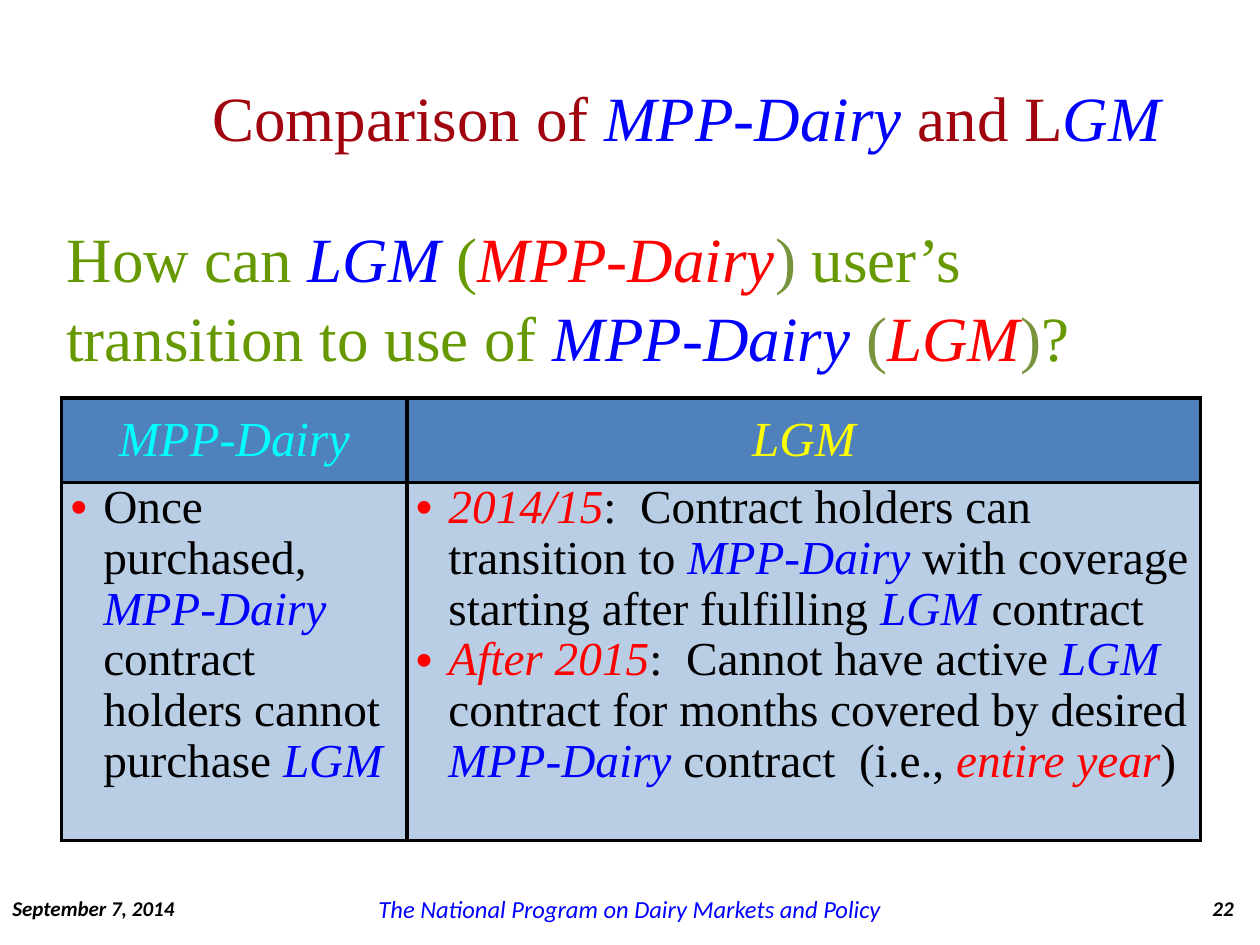
"""Build the slide comparing MPP-Dairy and LGM."""
from pptx import Presentation
from pptx.dml.color import RGBColor
from pptx.enum.text import MSO_ANCHOR, PP_ALIGN
from pptx.oxml import parse_xml
from pptx.oxml.ns import nsdecls
from pptx.util import Inches, Pt

BLACK = RGBColor(0x00, 0x00, 0x00)
BLUE = RGBColor(0x00, 0x00, 0xFF)
RED = RGBColor(0xFF, 0x00, 0x00)
MAROON = RGBColor(0xA0, 0x02, 0x0E)
GREEN = RGBColor(0x66, 0x99, 0x00)
OLIVE = RGBColor(0x77, 0x93, 0x3C)
CYAN = RGBColor(0x00, 0xFF, 0xFF)
YELLOW = RGBColor(0xFF, 0xFF, 0x00)
HEADER_FILL = RGBColor(0x4F, 0x81, 0xBD)
BODY_FILL = RGBColor(0xB9, 0xCD, 0xE5)

SERIF = "Times New Roman"
SANS = "Calibri"

TITLE = [("Comparison of ", MAROON, False), ("MPP-Dairy ", BLUE, True),
         ("and L", MAROON, False), ("GM", BLUE, True)]
QUESTION = [("How can ", GREEN, False), ("LGM", BLUE, True),
            (" (", GREEN, False), ("MPP-Dairy", RED, True),
            (") ", OLIVE, False), ("user’s transition to use of ", GREEN, False),
            ("MPP-Dairy ", BLUE, True), ("(", OLIVE, False),
            ("LGM", RED, True), (")", OLIVE, False), ("?", GREEN, False)]
HEADERS = [("MPP-Dairy", CYAN, True), ("LGM", YELLOW, True)]
MPP_POINTS = [
    [("Once purchased, ", BLACK, False), ("MPP-Dairy", BLUE, True),
     ("  contract holders cannot purchase ", BLACK, False), ("LGM", BLUE, True)],
]
LGM_POINTS = [
    [("2014/15", RED, True),
     (":  Contract holders can transition to ", BLACK, False),
     ("MPP-Dairy", BLUE, True),
     (" with coverage starting after fulfilling ", BLACK, False),
     ("LGM", BLUE, True), (" contract", BLACK, False)],
    [("After 2015", RED, True), (":  Cannot have active ", BLACK, False),
     ("LGM", BLUE, True),
     (" contract for months covered by desired ", BLACK, False),
     ("MPP-Dairy", BLUE, True), (" contract  (i.e., ", BLACK, False),
     ("entire year", RED, True), (")", BLACK, False)],
]


def add_spans(para, spans, size, font=SERIF, bold=False):
    """Append (text, colour, italic) spans to a paragraph."""
    for text, color, italic in spans:
        span = para.add_run()
        span.text = text
        span.font.name = font
        span.font.size = Pt(size)
        span.font.bold = bold
        span.font.italic = italic
        span.font.color.rgb = color


def add_text(page, place, spans, size, align=PP_ALIGN.LEFT,
             anchor=MSO_ANCHOR.MIDDLE, font=SERIF, bold=False):
    """Add a wrapped one-paragraph text box and return its paragraph."""
    box = page.shapes.add_textbox(*map(Inches, place))
    frame = box.text_frame
    frame.word_wrap = True
    frame.vertical_anchor = anchor
    para = frame.paragraphs[0]
    para.alignment = align
    add_spans(para, spans, size, font, bold)
    return para


def add_bullet(para):
    """Give a paragraph a red hanging bullet."""
    properties = para._p.get_or_add_pPr()
    properties.set("marL", str(Inches(0.26)))
    properties.set("indent", str(Inches(-0.26)))
    for markup in (
        f'<a:buClr {nsdecls("a")}><a:srgbClr val="{RED}"/></a:buClr>',
        f'<a:buFont {nsdecls("a")} typeface="Arial"/>',
        f'<a:buChar {nsdecls("a")} char="•"/>',
    ):
        properties.append(parse_xml(markup))


def style_cell(cell, fill, anchor):
    """Set borders, fill, margins and anchor of a cell."""
    properties = cell._tc.get_or_add_tcPr()
    for side in ("lnL", "lnR", "lnT", "lnB"):
        properties.append(parse_xml(
            f'<a:{side} {nsdecls("a")} w="{Pt(2.25)}"><a:solidFill>'
            f'<a:srgbClr val="{BLACK}"/></a:solidFill></a:{side}>'))
    cell.fill.solid()
    cell.fill.fore_color.rgb = fill
    cell.margin_left = cell.margin_right = Inches(0.07)
    cell.margin_top = cell.margin_bottom = 0
    cell.vertical_anchor = anchor


def add_comparison(page):
    """Add the two-column comparison table."""
    table = page.shapes.add_table(
        2, 2, Inches(0.49), Inches(3.16), Inches(9.04), Inches(3.51)).table
    for column, width in zip(table.columns, (2.74, 6.3)):
        column.width = Inches(width)
    for row, height in zip(table.rows, (0.67, 2.84)):
        row.height = Inches(height)
    for index, header in enumerate(HEADERS):
        cell = table.cell(0, index)
        style_cell(cell, HEADER_FILL, MSO_ANCHOR.MIDDLE)
        para = cell.text_frame.paragraphs[0]
        para.alignment = PP_ALIGN.CENTER
        add_spans(para, [header], 28)
    for index, points in enumerate((MPP_POINTS, LGM_POINTS)):
        cell = table.cell(1, index)
        style_cell(cell, BODY_FILL, MSO_ANCHOR.TOP)
        frame = cell.text_frame
        for number, spans in enumerate(points):
            para = frame.add_paragraph() if number else frame.paragraphs[0]
            add_bullet(para)
            para.line_spacing = 0.97
            add_spans(para, spans, 27)


def add_footer(page):
    """Add the date, programme name and page number."""
    add_text(page, (0, 7.09, 1.53, 0.24), [("September 7, 2014", BLACK, True)],
             12, font=SANS, bold=True)
    add_text(page, (2.88, 7.09, 4.24, 0.24),
             [("The National Program on Dairy Markets and Policy", BLUE, True)],
             14, PP_ALIGN.CENTER, font=SANS)
    add_text(page, (9.11, 7.09, 0.78, 0.24), [("22", BLACK, True)],
             12, PP_ALIGN.RIGHT, font=SANS, bold=True)


def main():
    """Build and save the deck."""
    deck = Presentation()
    deck.slide_width = Inches(10)
    deck.slide_height = Inches(7.5)
    page = deck.slides.add_slide(deck.slide_layouts[6])
    add_text(page, (1.4, 0.3, 8.1, 1.25), TITLE, 36, PP_ALIGN.CENTER)
    add_comparison(page)
    question = add_text(page, (0.43, 1.66, 8.8, 1.31), QUESTION, 36,
                        anchor=MSO_ANCHOR.TOP)
    question.line_spacing = 1.05
    add_footer(page)
    deck.save("out.pptx")


if __name__ == "__main__":
    main()
